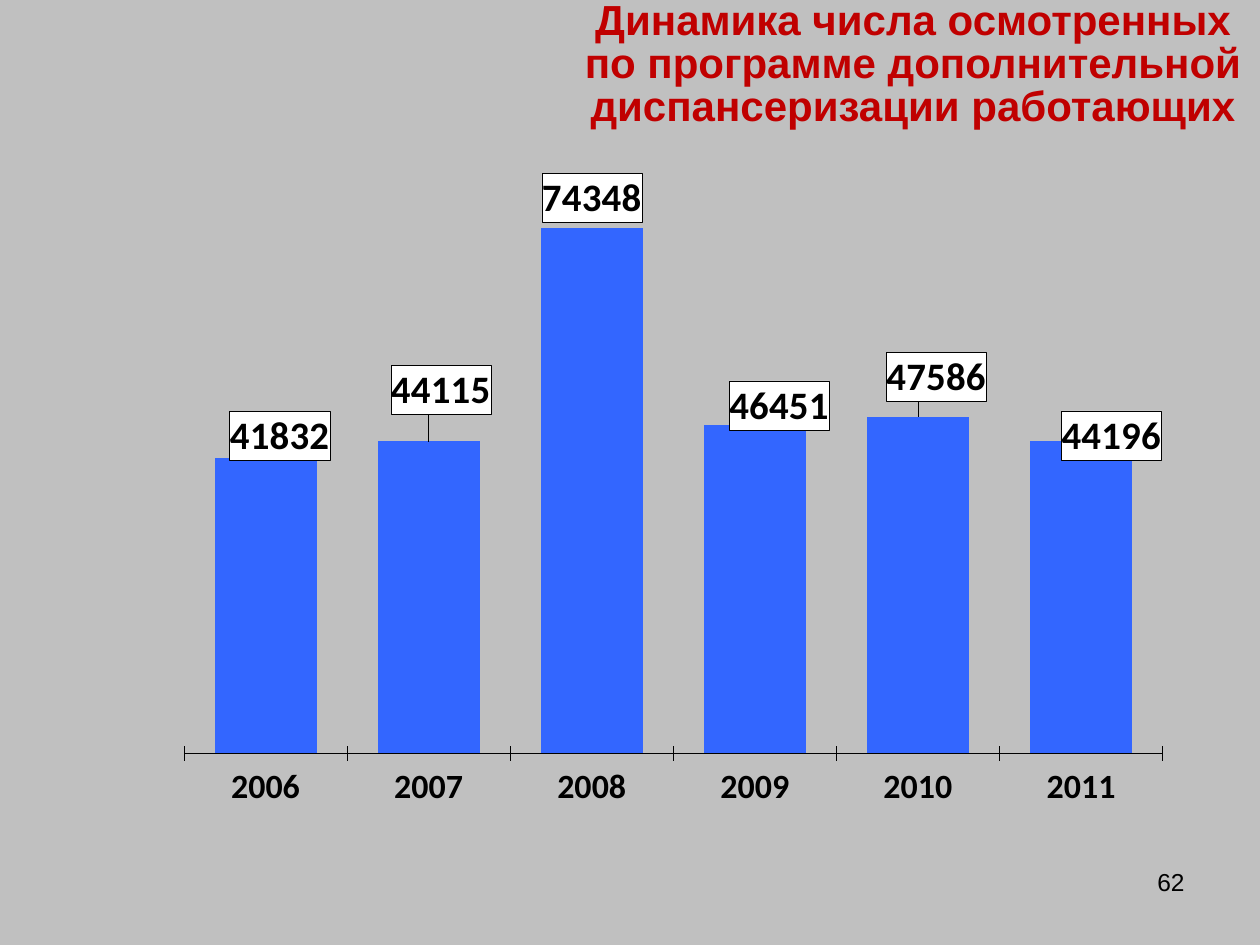
from dataclasses import dataclass

from lxml import etree
from pptx import Presentation
from pptx import util as u
from pptx.chart.data import CategoryChartData
from pptx.dml.color import RGBColor
from pptx.enum import chart as kinds, text
from pptx.oxml import parse_xml
from pptx.oxml.ns import nsdecls, qn

SCALE = 914400 / 126


@dataclass(frozen=True)
class Theme:
    """Colours, fonts and type sizes of the slide."""
    backdrop: RGBColor = RGBColor.from_string("C0C0C0")
    heading: RGBColor = RGBColor.from_string("C00000")
    ink: RGBColor = RGBColor.from_string("000000")
    bar: RGBColor = RGBColor.from_string("3366FF")
    text_font: str = "Arial"
    chart_font: str = "Calibri"
    heading_size: float = 24
    number_size: float = 14
    label_size: float = 22.2
    axis_size: float = 19.4


THEME = Theme()
EXAMINED = {"2006": 41832, "2007": 44115, "2008": 74348,
            "2009": 46451, "2010": 47586, "2011": 44196}
LABEL_SHIFTS = {0: (14, 8), 1: (12, -22), 3: (24, 10), 4: (18, -11), 5: (30, 24)}


def px(length):
    """Turn px into EMU."""
    return u.Emu(round(length * SCALE))


def style_font(font, name, size, color, bold=False):
    """Set the face, size, colour and weight of a font."""
    font.name, font.size, font.bold = name, u.Pt(size), bold
    font.color.rgb = color


def add_text(page, box, words, size, color, align, bold=False):
    """Place one paragraph in a wrapping text box and return its frame."""
    frame = page.shapes.add_textbox(*map(px, box)).text_frame
    frame.word_wrap = True
    para = frame.paragraphs[0]
    para.text = words
    para.alignment = align
    style_font(para.font, THEME.text_font, size, color, bold)
    return frame


def add_title(page, box):
    """Place the slide heading."""
    frame = add_text(page, box, "Динамика числа осмотренных по программе дополнительной "
                     "диспансеризации работающих", THEME.heading_size, THEME.heading,
                     text.PP_ALIGN.CENTER, bold=True)
    frame.vertical_anchor = text.MSO_ANCHOR.MIDDLE
    frame.paragraphs[0].line_spacing = 0.85


def make_layout(**settings):
    """Build a manual chart layout from its settings."""
    layout = parse_xml(f"<c:layout {nsdecls('c')}><c:manualLayout/></c:layout>")
    for name, value in settings.items():
        etree.SubElement(layout[0], qn(f"c:{name}")).set("val", str(value))
    return layout


def frame_label(element):
    """Give a data label a white fill and a thin black border."""
    border = parse_xml(
        f'<c:spPr {nsdecls("c", "a")}><a:solidFill><a:srgbClr val="FFFFFF"/></a:solidFill>'
        f'<a:ln w="3175"><a:solidFill><a:srgbClr val="{THEME.ink}"/></a:solidFill></a:ln></c:spPr>')
    element.find(qn("c:txPr")).addprevious(border)


def style_labels(series, width, height):
    """Show boxed values above the bars, some of them shifted."""
    labels = series.data_labels
    labels.show_value = True
    shifted = [series.points[index].data_label for index in LABEL_SHIFTS]
    for label in [labels, *shifted]:
        label.position = kinds.XL_LABEL_POSITION.OUTSIDE_END
        style_font(label.font, THEME.chart_font, THEME.label_size, THEME.ink, True)
    group = labels._element
    frame_label(group)
    for element in group.findall(qn("c:dLbl")):
        index = element.find(qn("c:idx"))
        right, down = LABEL_SHIFTS[int(index.get("val"))]
        index.addnext(make_layout(x=round(right / width, 3), y=round(down / height, 3)))
        frame_label(element)


def add_examined_chart(page, box):
    """Place the column chart of people examined each year."""
    data = CategoryChartData()
    data.categories = list(EXAMINED)
    data.add_series("Series 1", list(EXAMINED.values()))
    chart = page.shapes.add_chart(
        kinds.XL_CHART_TYPE.COLUMN_CLUSTERED, *map(px, box), data).chart
    chart.has_legend = chart.has_title = False
    style_font(chart.font, THEME.chart_font, THEME.label_size, THEME.ink, True)

    values = chart.value_axis
    values.visible = values.has_major_gridlines = False
    values.minimum_scale, values.maximum_scale = 0, 80000

    years = chart.category_axis
    years.tick_label_position = kinds.XL_TICK_LABEL_POSITION.LOW
    years.major_tick_mark = kinds.XL_TICK_MARK.CROSS
    years.format.line.width = u.Pt(0.3)
    years.format.line.color.rgb = THEME.ink
    style_font(years.tick_labels.font, THEME.chart_font, THEME.axis_size, THEME.ink, True)

    plot = chart.plots[0]
    plot.gap_width, plot.vary_by_categories = 60, False
    series = plot.series[0]
    series.format.fill.solid()
    series.format.fill.fore_color.rgb = THEME.bar
    style_labels(series, *box[2:])

    area = chart._chartSpace.find(f".//{qn('c:plotArea')}")
    for layout in area.findall(qn("c:layout")):
        area.remove(layout)
    area.insert(0, make_layout(layoutTarget="inner", xMode="edge", yMode="edge",
                               x=0.014, y=0.022, w=0.97, h=0.847))


def add_page_number(page, box):
    """Place the page number."""
    add_text(page, box, "62", THEME.number_size, THEME.ink, text.PP_ALIGN.RIGHT)


def main():
    """Build and save the slide."""
    deck = Presentation()
    deck.slide_width, deck.slide_height = px(1260), px(945)
    page = deck.slides.add_slide(deck.slide_layouts[6])
    page.background.fill.solid()
    page.background.fill.fore_color.rgb = THEME.backdrop
    add_title(page, (571, -4, 684, 139))
    add_examined_chart(page, (170, 173, 1009, 668))
    add_page_number(page, (903, 861, 294, 66))
    deck.save("out.pptx")


if __name__ == "__main__":
    main()
